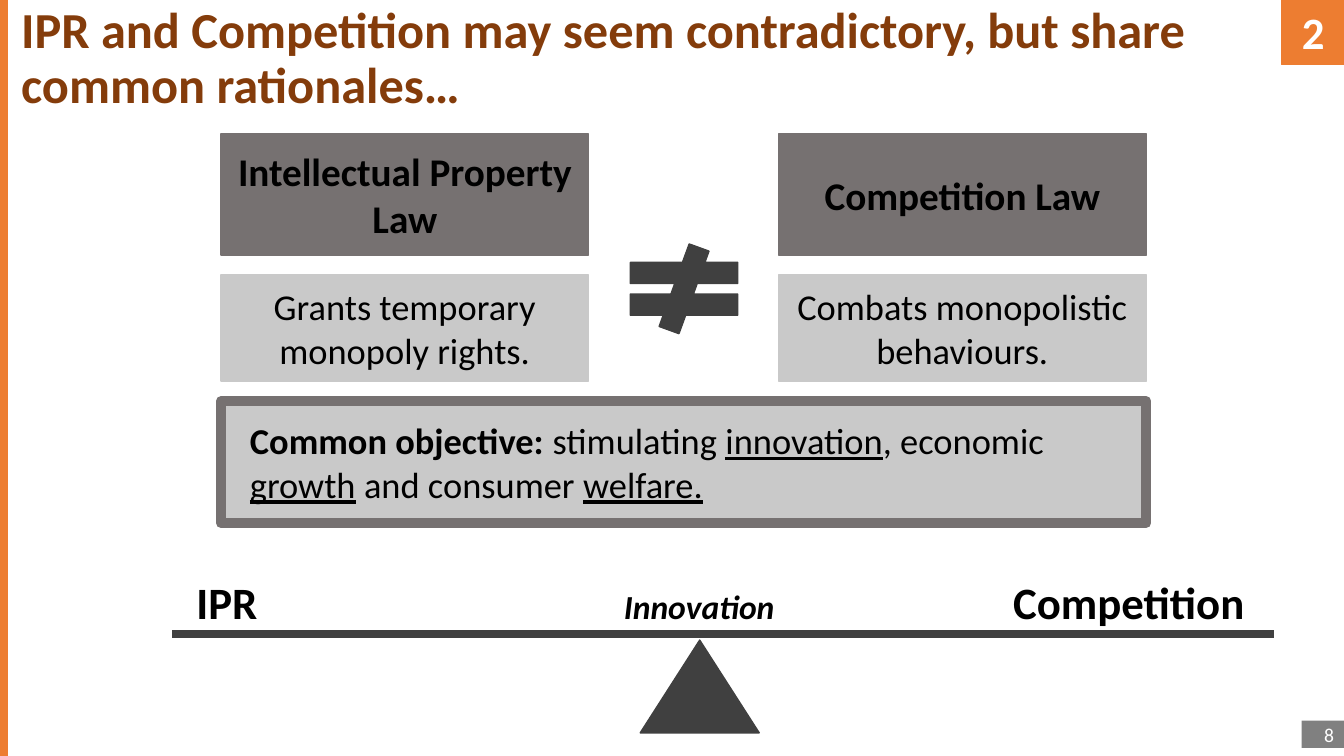
from dataclasses import dataclass

from lxml import etree
from pptx import Presentation
from pptx.dml.color import RGBColor
from pptx.enum.shapes import MSO_CONNECTOR, MSO_SHAPE
from pptx.enum.text import MSO_ANCHOR, MSO_AUTO_SIZE, PP_ALIGN
from pptx.oxml.ns import qn
from pptx.util import Inches, Pt

RECT = MSO_SHAPE.RECTANGLE
TRIANGLE = MSO_SHAPE.ISOSCELES_TRIANGLE
UNEQUAL = MSO_SHAPE.MATH_NOT_EQUAL
STRAIGHT = MSO_CONNECTOR.STRAIGHT
TOP, MIDDLE = MSO_ANCHOR.TOP, MSO_ANCHOR.MIDDLE
LEFT, CENTER, RIGHT = PP_ALIGN.LEFT, PP_ALIGN.CENTER, PP_ALIGN.RIGHT
NO_FIT = MSO_AUTO_SIZE.NONE


@dataclass(frozen=True)
class Theme:
    font: str = "Calibri"
    accent: str = "ED7D31"
    title: str = "843C0B"
    head: str = "767171"
    body: str = "C9C9C9"
    dark: str = "404040"
    page: str = "808080"
    black: str = "000000"
    white: str = "FFFFFF"
    title_size: int = 36
    label_size: int = 32
    head_size: int = 28
    body_size: int = 26
    note_size: int = 24
    page_size: int = 14


class Board:
    def __init__(self, slide, theme):
        self.slide = slide
        self.theme = theme

    def text(self, shape, parts, size, color=None, align=LEFT, anchor=MIDDLE):
        frame = shape.text_frame
        frame.word_wrap = True
        frame.vertical_anchor = anchor
        para = frame.paragraphs[0]
        para.alignment = align
        for words, style in parts:
            run = para.add_run()
            run.text = words
            font = run.font
            font.name = self.theme.font
            font.size = Pt(size)
            font.color.rgb = RGBColor.from_string(color or self.theme.black)
            font.bold = "b" in style
            font.italic = "i" in style
            font.underline = "u" in style
        return para

    def title(self, words, box):
        shape = self.slide.shapes.title
        shape.left, shape.top, shape.width, shape.height = map(Inches, box)
        para = self.text(shape, [(words, "b")], self.theme.title_size,
                         self.theme.title, anchor=TOP)
        para.line_spacing = 0.9
        shape.text_frame.auto_size = NO_FIT

    def shape(self, kind, box, fill, line=None, width=1):
        shape = self.slide.shapes.add_shape(kind, *map(Inches, box))
        shape.shadow.inherit = False
        shape.fill.solid()
        shape.fill.fore_color.rgb = RGBColor.from_string(fill)
        if width:
            shape.line.color.rgb = RGBColor.from_string(line or fill)
            shape.line.width = Pt(width)
        else:
            shape.line.fill.background()
        return shape

    def label(self, words, box, size, style="b", align=LEFT):
        shape = self.slide.shapes.add_textbox(*map(Inches, box))
        self.text(shape, [(words, style)], size, align=align, anchor=TOP)

    def line(self, start, end, color, width):
        ends = map(Inches, (*start, *end))
        line = self.slide.shapes.add_connector(STRAIGHT, *ends)
        line.line.color.rgb = RGBColor.from_string(color)
        line.line.width = Pt(width)
        props = line.element.find(qn("p:spPr"))
        etree.SubElement(props, qn("a:effectLst"))


def main():
    deck = Presentation()
    deck.slide_width, deck.slide_height = Inches(13.33), Inches(7.5)
    theme = Theme()
    board = Board(deck.slides.add_slide(deck.slide_layouts[5]), theme)

    board.line((0.04, 0), (0.04, 7.5), theme.accent, 6)
    page = board.shape(RECT, (12.91, 7.15, 0.42, 0.27), theme.page, width=0)
    board.text(page, [("8", "")], theme.page_size, theme.white, RIGHT)
    board.title("IPR and Competition may seem contradictory, "
                "but share common rationales…", (0.11, 0, 13.23, 1.45))

    laws = [
        (2.19, "Intellectual Property Law", "Grants temporary monopoly rights."),
        (7.72, "Competition Law", "Combats monopolistic behaviours."),
    ]
    for left, name, effect in laws:
        head = board.shape(RECT, (left, 1.33, 3.65, 1.2), theme.head)
        board.text(head, [(name, "b")], theme.head_size, align=CENTER)
        body = board.shape(RECT, (left, 2.73, 3.65, 1.05), theme.body)
        board.text(body, [(effect, "")], theme.body_size, align=CENTER)
    board.shape(UNEQUAL, (6.06, 2.42, 1.45, 0.89), theme.dark)

    goal = board.shape(RECT, (2.19, 3.98, 9.18, 1.21), theme.body, theme.head, 7)
    para = board.text(goal, [
        ("Common objective: ", "b"), ("stimulating ", ""), ("innovation", "u"),
        (", economic ", ""), ("growth", "u"), (" and consumer ", ""),
        ("welfare.", "u"),
    ], theme.body_size)
    indent = para._p.get_or_add_pPr()
    indent.set("marL", str(Inches(0.19)))
    indent.set("indent", "0")

    board.line((1.71, 6.29), (12.64, 6.29), theme.dark, 6)
    board.shape(TRIANGLE, (6.35, 6.35, 1.18, 0.92), theme.dark)
    board.label("IPR", (1.85, 5.65, 0.89, 0.64), theme.label_size)
    board.label("Competition", (9.95, 5.65, 2.69, 0.64), theme.label_size)
    board.label("Innovation", (5.37, 5.76, 3.13, 0.5), theme.note_size,
                "bi", CENTER)

    part = board.shape(RECT, (12.71, 0, 0.63, 0.64), theme.accent, width=0.75)
    board.text(part, [("2", "b")], theme.label_size, theme.white, CENTER, TOP)

    deck.save("out.pptx")


if __name__ == "__main__":
    main()
